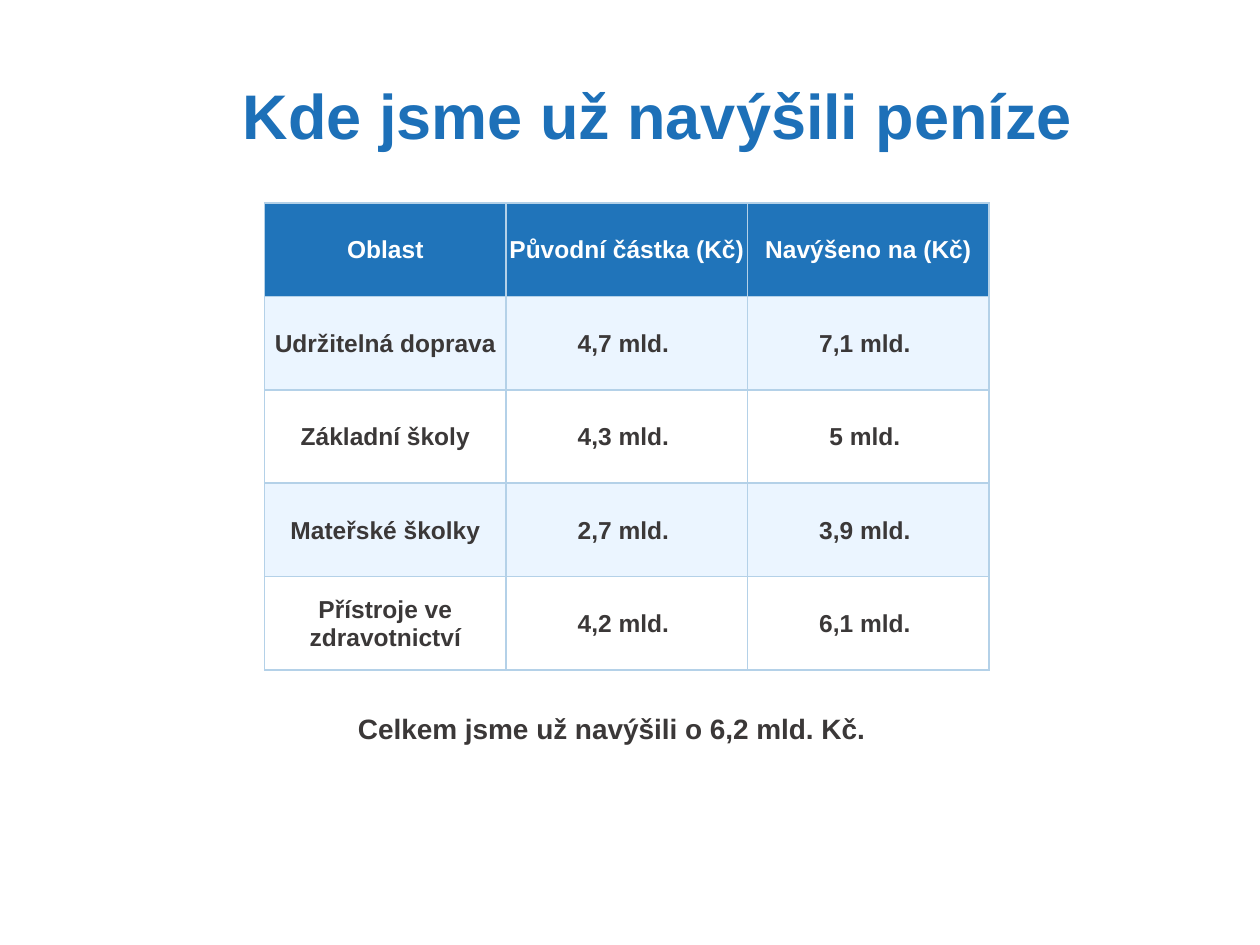
from dataclasses import dataclass

from lxml.etree import SubElement
from pptx import Presentation
from pptx.dml.color import RGBColor
from pptx.enum.text import MSO_ANCHOR, PP_ALIGN
from pptx.oxml.ns import qn
from pptx.util import Inches, Pt


@dataclass(frozen=True)
class Theme:
    font: str = "Arial"
    title: str = "1D70B8"
    header: str = "2074BA"
    band: str = "EBF5FF"
    plain: str = "FFFFFF"
    border: str = "B4D1E8"
    text: str = "3B3838"
    title_size: int = 36
    table_size: int = 14
    total_size: int = 16


def write_text(frame, text, *, font, size, color, indent=0):
    """Write one bold, centred paragraph."""
    frame.word_wrap = True
    paragraph = frame.paragraphs[0]
    paragraph.alignment = PP_ALIGN.CENTER
    if indent:
        properties = paragraph._p.get_or_add_pPr()
        properties.set("marL", str(indent))
        properties.set("indent", "0")
    run = paragraph.add_run()
    run.text = text
    run.font.name = font
    run.font.size = Pt(size)
    run.font.bold = True
    run.font.color.rgb = RGBColor.from_string(color)


class SlideBuilder:
    """Places elements on a grid of 100 columns by 75 rows."""

    def __init__(self, presentation, theme):
        self.theme = theme
        self.slide = presentation.slides.add_slide(presentation.slide_layouts[6])
        self.column = presentation.slide_width / 100
        self.row = presentation.slide_height / 75

    def area(self, left, top, width, height):
        return (round(left * self.column), round(top * self.row),
                round(width * self.column), round(height * self.row))

    def text(self, text, area, *, size, color, anchor, indent=0):
        frame = self.slide.shapes.add_textbox(*self.area(*area)).text_frame
        frame.vertical_anchor = anchor
        write_text(frame, text, font=self.theme.font, size=size, color=color,
                   indent=round(indent * self.column))

    def table(self, rows, area):
        table = self.slide.shapes.add_table(
            len(rows), len(rows[0]), *self.area(*area)).table
        for row_index, values in enumerate(rows):
            if row_index == 0:
                fill, color = self.theme.header, self.theme.plain
            else:
                fill = self.theme.band if row_index % 2 else self.theme.plain
                color = self.theme.text
            for column_index, value in enumerate(values):
                self.cell(table.cell(row_index, column_index), value, fill, color)

    def cell(self, cell, value, fill, color):
        cell.margin_left = cell.margin_right = cell.margin_top = Inches(0.01)
        cell.margin_bottom = 0
        cell.vertical_anchor = MSO_ANCHOR.MIDDLE
        write_text(cell.text_frame, value, font=self.theme.font,
                   size=self.theme.table_size, color=color)
        # Borders come before the fill in the cell properties
        properties = cell._tc.get_or_add_tcPr()
        for side in ("a:lnL", "a:lnR", "a:lnT", "a:lnB"):
            line = SubElement(properties, qn(side), w=str(Pt(1)))
            solid = SubElement(line, qn("a:solidFill"))
            SubElement(solid, qn("a:srgbClr"), val=self.theme.border)
        cell.fill.solid()
        cell.fill.fore_color.rgb = RGBColor.from_string(fill)


def main():
    presentation = Presentation()
    presentation.slide_width = Inches(10)
    presentation.slide_height = Inches(7.5)
    theme = Theme()
    builder = SlideBuilder(presentation, theme)

    # Title
    builder.text("Kde jsme už navýšili peníze", (4.4, 5.6, 90.6, 7.1),
                 size=theme.title_size, color=theme.title,
                 anchor=MSO_ANCHOR.TOP, indent=5)

    # Amounts by area
    builder.table([
        ("Oblast", "Původní částka (Kč)", "Navýšeno na (Kč)"),
        ("Udržitelná doprava", "4,7 mld. ", "7,1 mld. "),
        ("Základní školy", "4,3 mld. ", "5 mld. "),
        ("Mateřské školky", "2,7 mld. ", "3,9 mld. "),
        ("Přístroje ve zdravotnictví", "4,2 mld. ", "6,1 mld. "),
    ], (21, 16.1, 57.5, 37.1))

    # Total
    builder.text("Celkem jsme už navýšili o 6,2 mld. Kč.", (9.1, 53.2, 78.9, 6.4),
                 size=theme.total_size, color=theme.text,
                 anchor=MSO_ANCHOR.BOTTOM)

    presentation.save("out.pptx")


if __name__ == "__main__":
    main()
